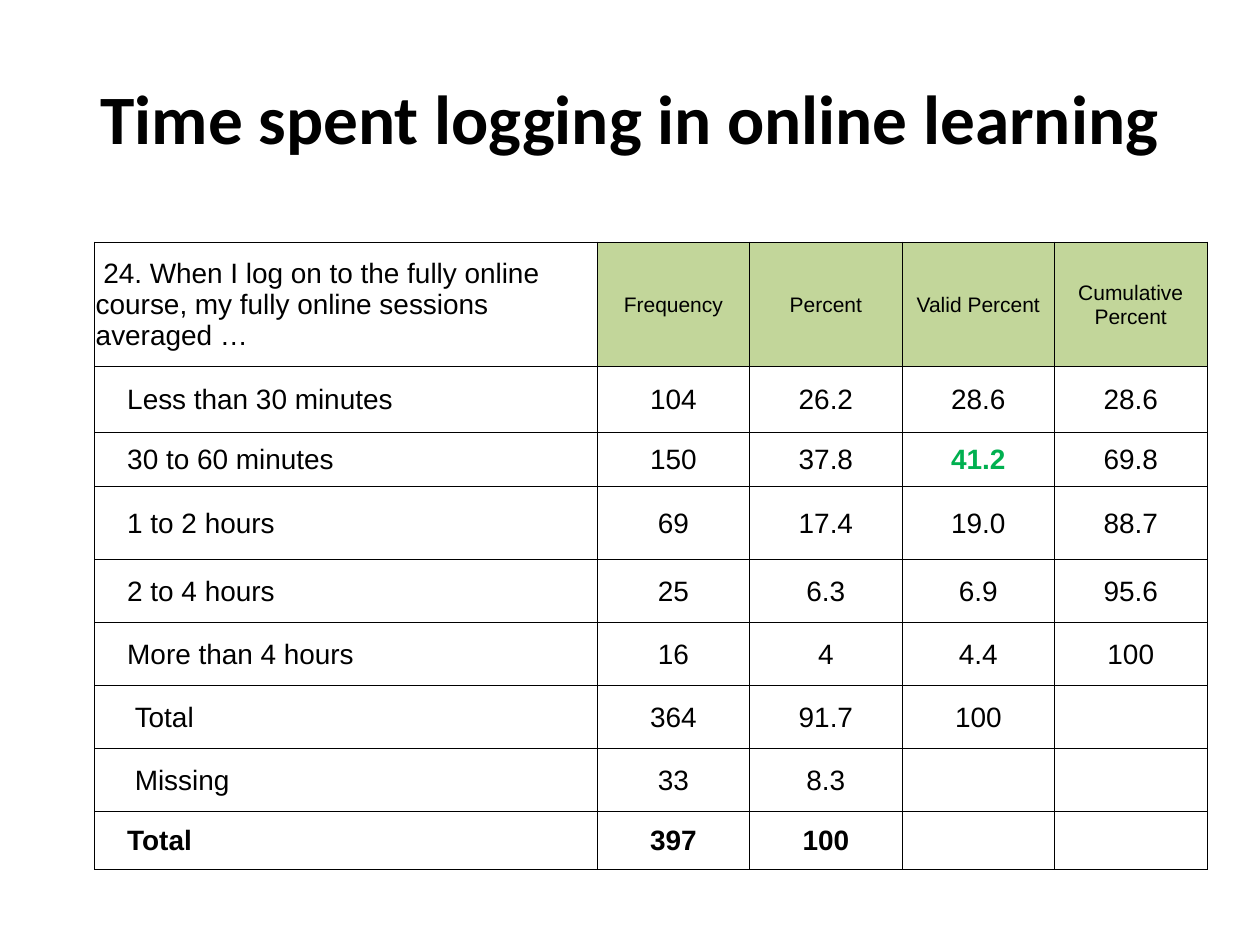
from lxml import etree
from pptx import Presentation, util as u
from pptx.dml.color import RGBColor
from pptx.enum import text as t
from pptx.oxml import ns

BLACK, GREEN, HEAD = "000000", "00B050", "C2D69A"


def paint(obj, color):
    obj.solid()
    obj.fore_color.rgb = RGBColor.from_string(color)


def write(para, words, face, size, color=BLACK, bold=False):
    run = para.add_run()
    run.text = words
    font = run.font
    font.name, font.size, font.bold = face, u.Pt(size), bold
    paint(font.fill, color)


deck = Presentation()
deck.slide_width, deck.slide_height = u.Inches(10), u.Inches(7.5)
slide = deck.slides.add_slide(deck.slide_layouts[6])

title = slide.shapes.add_textbox(u.Inches(0.5), u.Inches(0.3), u.Inches(9), u.Inches(1.25))
frame = title.text_frame
frame.word_wrap = True
frame.vertical_anchor = t.MSO_ANCHOR.MIDDLE
frame.paragraphs[0].alignment = t.PP_ALIGN.CENTER
write(frame.paragraphs[0], "Time spent logging in online learning", "Calibri", 39.6, bold=True)

rows = [
    ["24. When I log on to the fully online course, my fully online sessions averaged …",
     "Frequency", "Percent", "Valid Percent", "Cumulative Percent"],
    ["Less than 30 minutes", "104", "26.2", "28.6", "28.6"],
    ["30 to 60 minutes", "150", "37.8", "41.2", "69.8"],
    ["1 to 2 hours", "69", "17.4", "19.0", "88.7"],
    ["2 to 4 hours", "25", "6.3", "6.9", "95.6"],
    ["More than 4 hours", "16", "4", "4.4", "100"],
    ["Total", "364", "91.7", "100", ""],
    ["Missing", "33", "8.3", "", ""],
    ["Total", "397", "100", "", ""],
]
widths = [3.99] + [1.21] * 4
heights = [0.99, 0.52, 0.43, 0.58, 0.5, 0.5, 0.5, 0.5, 0.46]
indents = [0.01] + [0.26] * 5 + [0.32] * 2 + [0.26]
last = len(rows) - 1

table = slide.shapes.add_table(len(rows), len(widths), u.Inches(0.75), u.Inches(1.92),
                               u.Inches(sum(widths)), u.Inches(sum(heights))).table
table.first_row = table.horz_banding = False
for col, width in zip(table.columns, widths):
    col.width = u.Inches(width)
for row, height in zip(table.rows, heights):
    row.height = u.Inches(height)

for r, row in enumerate(rows):
    for c, words in enumerate(row):
        cell = table.cell(r, c)
        cell.vertical_anchor = t.MSO_ANCHOR.MIDDLE
        cell.margin_left = u.Inches(0.01 if c else indents[r])
        cell.margin_right = cell.margin_top = u.Inches(0.01)
        cell.margin_bottom = 0

        props = cell._tc.get_or_add_tcPr()
        for side in ("a:lnL", "a:lnR", "a:lnT", "a:lnB"):
            line = etree.SubElement(props, ns.qn(side), w=str(u.Pt(0.5)))
            ink = etree.SubElement(line, ns.qn("a:solidFill"))
            etree.SubElement(ink, ns.qn("a:srgbClr"), val=BLACK)

        if r == 0 and c:
            paint(cell.fill, HEAD)
        elif c == 0 and 0 < r < 7:
            paint(cell.fill, "FFFFFF")
        else:
            cell.fill.background()

        para = cell.text_frame.paragraphs[0]
        if c:
            para.alignment = t.PP_ALIGN.CENTER
        elif r == 0:
            # First line of the question is set in slightly
            para._p.get_or_add_pPr().set("indent", str(u.Inches(0.06)))
        if words:
            peak = words == "41.2"
            write(para, words, "Arial", 12 if r == 0 and c else 16,
                  GREEN if peak else BLACK, peak or r == last)

deck.save("out.pptx")
